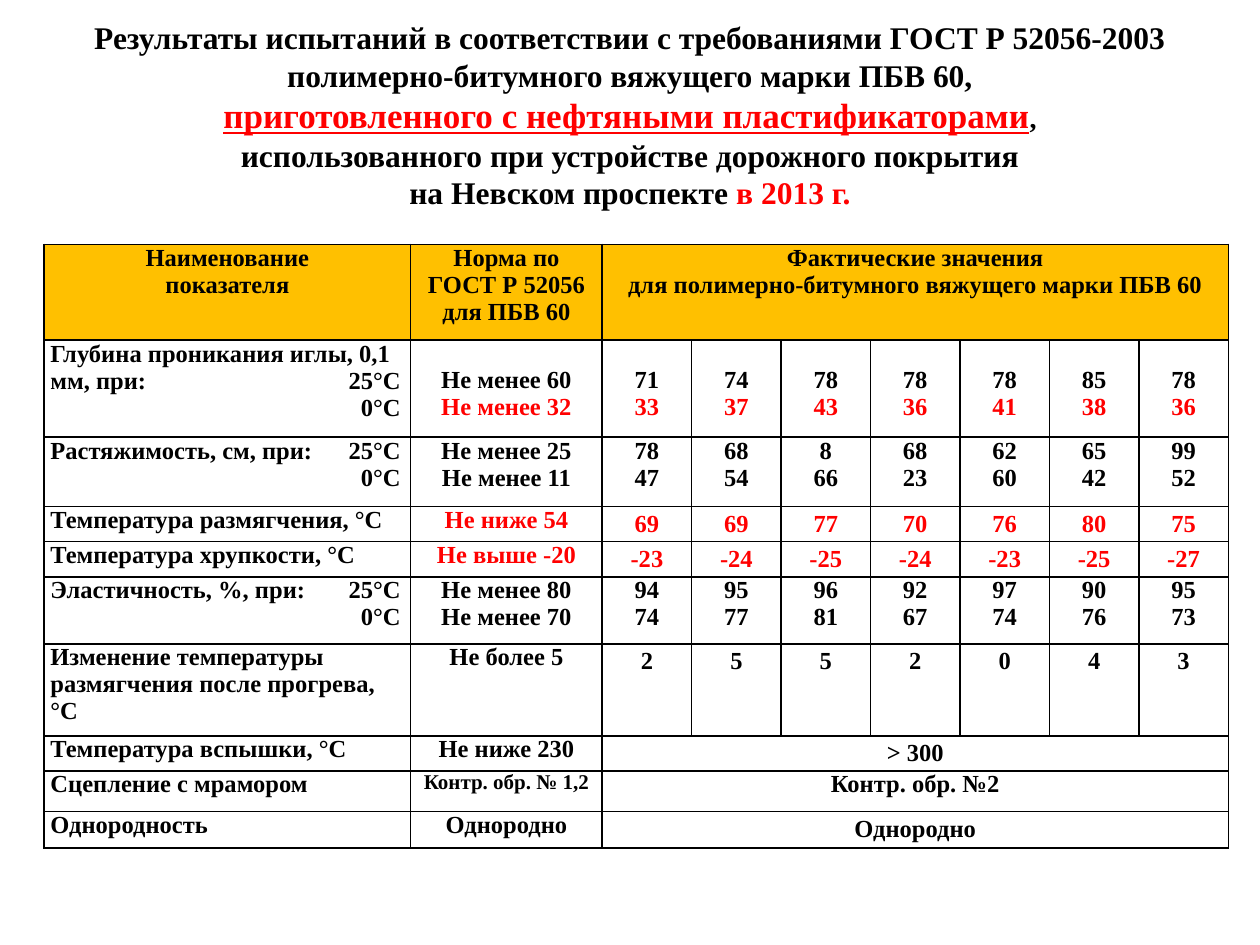
import dataclasses

import pptx
import pptx.dml.color
import pptx.enum.text
import pptx.oxml
import pptx.oxml.ns
import pptx.util
from pptx.util import Inches

ALIGN = pptx.enum.text.PP_ALIGN
ANCHOR = pptx.enum.text.MSO_ANCHOR


@dataclasses.dataclass(frozen=True)
class Theme:
    font: str = "Times New Roman"
    black: str = "000000"
    red: str = "FF0000"
    white: str = "FFFFFF"
    header: str = "FFC000"
    title: int = 18
    emphasis: int = 20
    comma: int = 16
    body: int = 14
    small: int = 12


THEME = Theme()


@dataclasses.dataclass(frozen=True)
class Row:
    """One indicator: values holds one list per text line; a single value spans all samples."""
    height: float
    name: list
    norm: list
    values: list
    colors: tuple = (THEME.black, THEME.black)
    value_spacing: float = 1.0
    norm_size: int = THEME.body
    top: float = 0


TITLE = [
    [("Результаты испытаний в соответствии с требованиями ГОСТ Р 52056-2003", THEME.title, THEME.black, False)],
    [("полимерно-битумного вяжущего марки ПБВ 60,", THEME.title, THEME.black, False)],
    [("приготовленного с нефтяными пластификаторами", THEME.emphasis, THEME.red, True),
     (",", THEME.comma, THEME.black, False)],
    [("использованного при устройстве дорожного покрытия", THEME.title, THEME.black, False)],
    [("на Невском проспекте ", THEME.title, THEME.black, False),
     ("в 2013 г.", THEME.title, THEME.red, False)],
]

HEADER_HEIGHT = 0.76
HEADER = [
    ["Наименование", "показателя"],
    ["Норма по", "ГОСТ Р 52056", "для ПБВ 60"],
    ["Фактические значения", "для полимерно-битумного вяжущего марки ПБВ 60"],
]
SAMPLES = 7
COLUMNS = [2.91, 1.52] + [0.71] * SAMPLES
TAB = 2.78
LINE = 0.21
RED = (THEME.red,)

ROWS = [
    Row(0.77, ["Глубина проникания иглы, 0,1 мм, при:\t25°С", "\t0°С"],
        ["Не менее 60", "Не менее 32"],
        [[71, 74, 78, 78, 78, 85, 78], [33, 37, 43, 36, 41, 38, 36]],
        colors=(THEME.black, THEME.red), top=LINE),
    Row(0.55, ["Растяжимость, см, при:\t25°С", "\t0°С"],
        ["Не менее 25", "Не менее 11"],
        [[78, 68, 8, 68, 62, 65, 99], [47, 54, 66, 23, 60, 42, 52]]),
    Row(0.28, ["Температура размягчения, °С"], ["Не ниже 54"],
        [[69, 69, 77, 70, 76, 80, 75]], colors=RED, value_spacing=1.15),
    Row(0.28, ["Температура хрупкости, °С"], ["Не выше -20"],
        [[-23, -24, -25, -24, -23, -25, -27]], colors=RED, value_spacing=1.15),
    Row(0.53, ["Эластичность, %, при:\t25°С", "\t0°С"],
        ["Не менее 80", "Не менее 70"],
        [[94, 95, 96, 92, 97, 90, 95], [74, 77, 81, 67, 74, 76, 73]]),
    Row(0.73, ["Изменение температуры размягчения после прогрева, °С"],
        ["Не более 5"], [[2, 5, 5, 2, 0, 4, 3]], value_spacing=1.15),
    Row(0.28, ["Температура вспышки, °С"], ["Не ниже 230"], [["˃ 300"]],
        value_spacing=1.15),
    Row(0.32, ["Сцепление с мрамором"], ["Контр. обр. № 1,2"],
        [["Контр. обр. №2"]], norm_size=THEME.small),
    Row(0.29, ["Однородность"], ["Однородно"], [["Однородно"]], value_spacing=1.15),
]


def rgb(color):
    return pptx.dml.color.RGBColor.from_string(color)


def add_run(p, text, size, color, underline=False):
    r = p.add_run()
    r.text = text
    font = r.font
    font.name, font.size, font.bold = THEME.font, pptx.util.Pt(size), True
    font.color.rgb = rgb(color)
    if underline:
        font.underline = True


def paragraphs(tf, count):
    """Yield count paragraphs, starting with the one the frame already has."""
    for i in range(count):
        yield tf.add_paragraph() if i else tf.paragraphs[0]


def build_title(sp, left, top, width, height):
    sp.left, sp.top, sp.width, sp.height = left, top, width, height
    sp.fill.solid()
    sp.fill.fore_color.rgb = rgb(THEME.white)
    tf = sp.text_frame
    tf.word_wrap = True
    tf.auto_size = pptx.enum.text.MSO_AUTO_SIZE.NONE
    tf.vertical_anchor = ANCHOR.MIDDLE
    tf.margin_top = tf.margin_bottom = 0
    for p, runs in zip(paragraphs(tf, len(TITLE)), TITLE):
        p.alignment = ALIGN.CENTER
        p.line_spacing = 1.0
        for run in runs:
            add_run(p, *run)


def set_borders(cell):
    tc_pr = cell._tc.get_or_add_tcPr()
    for side in ("lnL", "lnR", "lnT", "lnB"):
        tc_pr.append(pptx.oxml.parse_xml(
            f'<a:{side} {pptx.oxml.ns.nsdecls("a")} w="12700"><a:solidFill>'
            f'<a:srgbClr val="{THEME.black}"/></a:solidFill></a:{side}>'))


def set_right_tab(p):
    p._p.get_or_add_pPr().append(pptx.oxml.parse_xml(
        f'<a:tabLst {pptx.oxml.ns.nsdecls("a")}>'
        f'<a:tab pos="{Inches(TAB)}" algn="r"/></a:tabLst>'))


def fill_cell(cell, lines, colors=None, align=ALIGN.CENTER, size=THEME.body,
              spacing=1.0, top=0):
    cell.margin_left = cell.margin_right = Inches(0.05)
    cell.margin_top, cell.margin_bottom = Inches(top), 0
    cell.vertical_anchor = ANCHOR.TOP
    colors = colors or [THEME.black] * len(lines)
    for p, line, color in zip(paragraphs(cell.text_frame, len(lines)), lines, colors):
        p.alignment = align
        p.line_spacing = spacing
        if "\t" in line:
            set_right_tab(p)
        add_run(p, line, size, color)


def build_results(slide, left, top, width, height):
    table = slide.shapes.add_table(len(ROWS) + 1, len(COLUMNS),
                                   left, top, width, height).table
    for column, size in zip(table.columns, COLUMNS):
        column.width = Inches(size)
    for row, size in zip(table.rows, [HEADER_HEIGHT] + [r.height for r in ROWS]):
        row.height = Inches(size)
    for i, row in enumerate(table.rows):
        for cell in row.cells:
            set_borders(cell)
            if i:
                cell.fill.background()
            else:
                cell.fill.solid()
                cell.fill.fore_color.rgb = rgb(THEME.header)

    table.cell(0, 2).merge(table.cell(0, SAMPLES + 1))
    for j, lines in enumerate(HEADER):
        fill_cell(table.cell(0, j), lines)
    for i, row in enumerate(ROWS, 1):
        fill_cell(table.cell(i, 0), row.name, align=ALIGN.LEFT)
        fill_cell(table.cell(i, 1), row.norm, row.colors, size=row.norm_size, top=row.top)
        if len(row.values[0]) == 1:
            table.cell(i, 2).merge(table.cell(i, SAMPLES + 1))
        for j, sample in enumerate(zip(*row.values), 2):
            fill_cell(table.cell(i, j), [str(v) for v in sample], row.colors,
                      spacing=row.value_spacing, top=row.top)


def main():
    prs = pptx.Presentation()
    prs.slide_width, prs.slide_height = Inches(10), Inches(7.5)
    slide = prs.slides.add_slide(prs.slide_layouts[5])
    build_title(slide.shapes.title, 0, 0, prs.slide_width, Inches(1.82))
    build_results(slide, Inches(0.35), Inches(1.94), Inches(9.37), Inches(4.79))
    prs.save("out.pptx")


if __name__ == "__main__":
    main()
